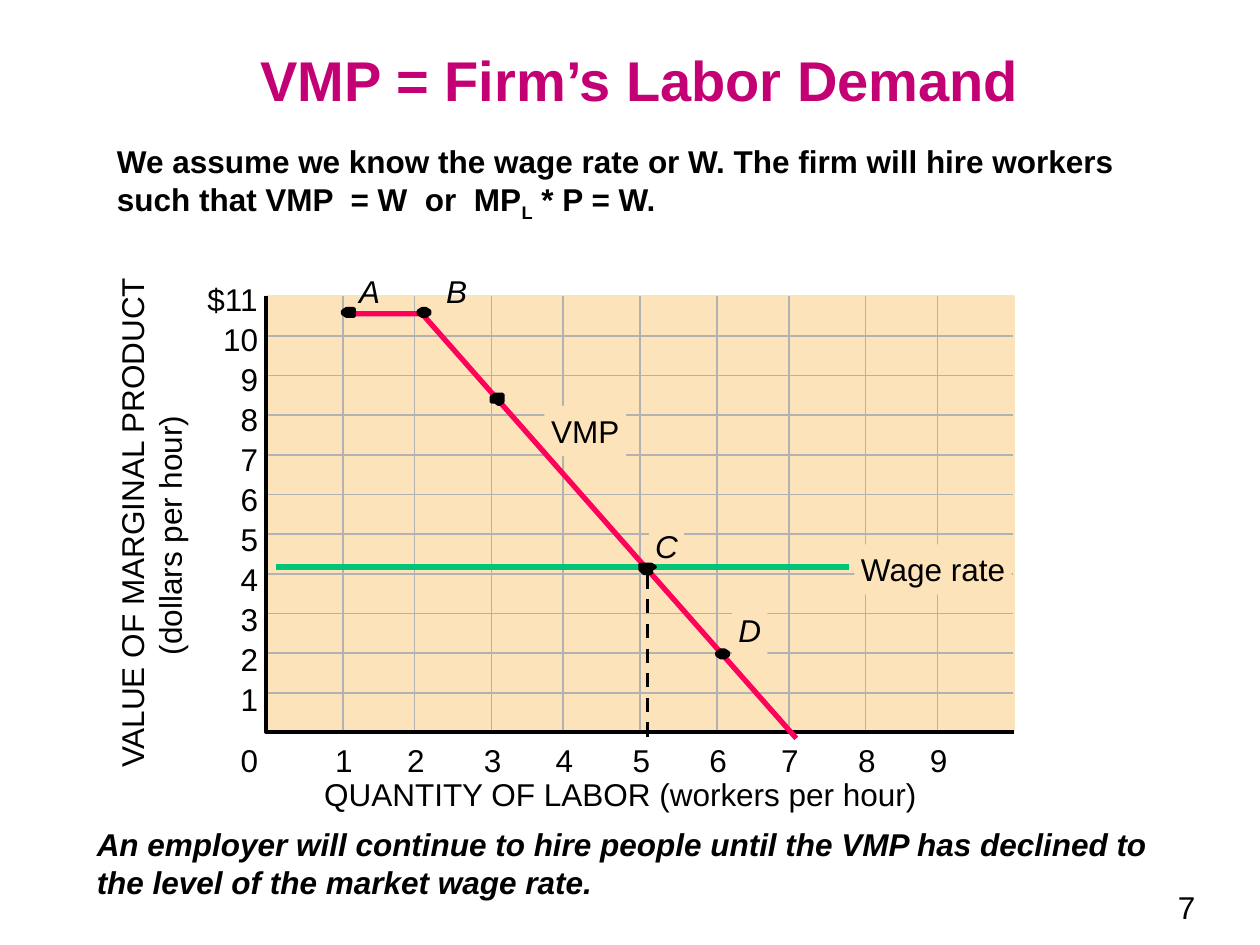
from dataclasses import dataclass
from typing import Optional

from lxml.etree import SubElement
from pptx import Presentation
from pptx.dml.color import RGBColor
from pptx.enum.dml import MSO_LINE
from pptx.enum.shapes import MSO_CONNECTOR
from pptx.enum.text import MSO_ANCHOR, MSO_AUTO_SIZE, PP_ALIGN
from pptx.oxml.ns import qn
from pptx.util import Cm, Pt

BLACK, GRID, PAPER, PAPER_EDGE = "000000", "B2B2B2", "FDE3BA", "F5E6BE"
TITLE_COLOR, DEMAND, WAGE = "C40075", "FF005A", "00C477"
LEFT, TOP, RIGHT, BOTTOM = 2.11, 2.35, 8.05, 5.81
GRID_X = (2.72, 3.29, 3.9, 4.47, 5.08, 5.69, 6.26, 6.87, 7.44)
GRID_STEP, LABEL_STEP = 0.315, 0.318
LABEL_WIDTHS = {1: 0.34, 2: 0.48, 3: 0.61}
TIGHT = (0.05, 0.05, 0.05, 0.05)

Point = tuple[float, float]


@dataclass
class Label:
    text: str
    left: float
    top: float
    width: float
    height: float = 0.37
    size: int = 18
    color: str = BLACK
    bold: bool = False
    italic: bool = False
    centered: bool = True
    wrap: bool = False
    fill: Optional[str] = None
    insets: tuple[float, float, float, float] = (0.1, 0.05, 0.1, 0.05)


@dataclass
class Segment:
    start: Point
    end: Point
    color: str = GRID
    width: float = 1
    dashed: bool = False


@dataclass
class Outline:
    points: list[Point]
    fill: Optional[str] = BLACK
    line: str = BLACK
    width: float = 2
    closed: bool = True


TITLE = Label("VMP = Firm’s Labor Demand", 0.83, 0.25, 8.5, 0.75, size=32,
              color=TITLE_COLOR, bold=True, wrap=True)
PAGE_NUMBER = Label("7", 9.25, 7, 0.67, 0.4, centered=False, wrap=True)
INTRO = Label("We assume we know the wage rate or W. The firm will hire workers "
              "such that VMP  = W  or  MP", 0.83, 1.08, 8.67, 0.71,
              bold=True, centered=False, wrap=True)
CONCLUSION = Label("An employer will continue to hire people until the VMP has declined "
                   "to the level of the market wage rate.", 0.67, 6.5, 8.83, 0.71,
                   bold=True, italic=True, centered=False, wrap=True)
VERTICAL_TITLE = Label("VALUE OF MARGINAL PRODUCT\n(dollars per hour)", -0.97, 3.9, 4.33, 0.7)
HORIZONTAL_TITLE = Label("QUANTITY OF LABOR (workers per hour)", 2.47, 6.1, 4.91)
LINE_NAMES = [
    Label("Wage rate", 6.78, 4.32, 1.25, 0.4, fill=PAPER, insets=TIGHT),
    Label("VMP", 4.32, 3.22, 0.65, 0.4, fill=PAPER, insets=TIGHT),
]
POINT_NAMES = [
    Label(name, left, 2.16, 0.32, 0.3, italic=True, insets=(0.1, 0, 0.05, 0))
    for name, left in (("A", 2.75), ("B", 3.44))
] + [
    Label(name, left, top, 0.28, 0.4, italic=True, fill=PAPER, insets=TIGHT)
    for name, left, top in (("C", 5.15, 4.13), ("D", 5.81, 4.8))
]
DOTS = [
    [(2.78, 2.51), (2.81, 2.51), (2.81, 2.45), (2.75, 2.45), (2.72, 2.47),
     (2.72, 2.49), (2.75, 2.51)],
    [(3.35, 2.51), (3.38, 2.51), (3.41, 2.49), (3.41, 2.47), (3.38, 2.45),
     (3.35, 2.45), (3.32, 2.47), (3.32, 2.49)],
    [(3.96, 3.21), (3.99, 3.19), (3.99, 3.13), (3.93, 3.13), (3.9, 3.15),
     (3.9, 3.19), (3.93, 3.19)],
    [(5.14, 4.55), (5.17, 4.55), (5.17, 4.52), (5.2, 4.5), (5.17, 4.48),
     (5.08, 4.48), (5.08, 4.52), (5.11, 4.55)],
    [(5.75, 5.22), (5.78, 5.2), (5.78, 5.18), (5.75, 5.16), (5.72, 5.16),
     (5.69, 5.18), (5.69, 5.2), (5.72, 5.22)],
]


def length(inches: float) -> Cm:
    return Cm(inches * 2.54)


def rgb(color: str) -> RGBColor:
    return RGBColor.from_string(color)


def style_span(span, label: Label) -> None:
    font = span.font
    font.name, font.size = "Arial", Pt(label.size)
    font.bold, font.italic = label.bold, label.italic
    font.color.rgb = rgb(label.color)


def draw_label(page, label: Label):
    box = page.shapes.add_textbox(*map(length, (label.left, label.top, label.width, label.height)))
    if label.fill:
        box.fill.solid()
        box.fill.fore_color.rgb = rgb(label.fill)
    frame = box.text_frame
    frame.margin_left, frame.margin_top, frame.margin_right, frame.margin_bottom = map(
        length, label.insets)
    frame.text = label.text
    frame.word_wrap = label.wrap
    frame.auto_size = MSO_AUTO_SIZE.SHAPE_TO_FIT_TEXT
    for para in frame.paragraphs:
        para.alignment = PP_ALIGN.CENTER if label.centered else PP_ALIGN.LEFT
        for span in para.runs:
            style_span(span, label)
    return box


def draw_segment(page, segment: Segment) -> None:
    connector = page.shapes.add_connector(
        MSO_CONNECTOR.STRAIGHT, *map(length, segment.start + segment.end))
    connector.line.color.rgb = rgb(segment.color)
    connector.line.width = Pt(segment.width)
    if segment.dashed:
        connector.line.dash_style = MSO_LINE.DASH
    SubElement(connector._element.spPr, qn("a:effectLst"))


def draw_outline(page, outline: Outline) -> None:
    start, *others = [(length(x), length(y)) for x, y in outline.points]
    builder = page.shapes.build_freeform(*start)
    builder.add_line_segments(others, close=outline.closed)
    shape = builder.convert_to_shape()
    shape.shadow.inherit = False
    if outline.fill:
        shape.fill.solid()
        shape.fill.fore_color.rgb = rgb(outline.fill)
    else:
        shape.fill.background()
    shape.line.color.rgb = rgb(outline.line)
    shape.line.width = Pt(outline.width)


def draw_plot(page) -> None:
    draw_outline(page, Outline([(RIGHT, BOTTOM), (RIGHT, TOP), (LEFT, TOP), (LEFT, BOTTOM)],
                               PAPER, PAPER_EDGE, 1))
    for x in GRID_X:
        draw_segment(page, Segment((x, 5.82), (x, TOP)))
    for row in range(1, 11):
        y = BOTTOM + 0.005 - row * GRID_STEP
        draw_segment(page, Segment((2.12, y), (8.04, y)))
    for number, center in enumerate((1.98, *(x + 0.01 for x in GRID_X))):
        draw_label(page, Label(str(number), center - 0.17, 5.83, 0.34))
    for row, text in enumerate((*map(str, range(1, 11)), "$11")):
        width = LABEL_WIDTHS[len(text)]
        draw_label(page, Label(text, 2.15 - width, 5.35 - row * LABEL_STEP, width))
    draw_outline(page, Outline([(LEFT, TOP), (LEFT, BOTTOM), (RIGHT, BOTTOM)],
                               None, closed=False))
    vertical = draw_label(page, VERTICAL_TITLE)
    vertical.rotation = 270
    properties = vertical.text_frame.paragraphs[0]._p.get_or_add_pPr()
    properties.set("marL", str(length(0.2)))
    properties.set("indent", "0")
    draw_label(page, HORIZONTAL_TITLE)


def draw_curves(page) -> None:
    for label in LINE_NAMES:
        draw_label(page, label)
    draw_outline(page, Outline([(2.78, 2.49), (3.35, 2.49), (6.32, 5.86)],
                               None, DEMAND, 3, closed=False))
    for label in POINT_NAMES:
        draw_label(page, label)
    draw_segment(page, Segment((2.19, 4.5), (6.74, 4.5), WAGE, 3))
    draw_segment(page, Segment((5.14, 4.56), (5.14, 5.89), BLACK, 2, dashed=True))
    for points in DOTS:
        draw_outline(page, Outline(points))


def draw_intro(page) -> None:
    para = draw_label(page, INTRO).text_frame.paragraphs[0]
    for text, baseline in (("L", "-25000"), (" * P = W.", "0")):
        span = para.add_run()
        span.text = text
        style_span(span, INTRO)
        span._r.get_or_add_rPr().set("baseline", baseline)


def main() -> None:
    """Build the labor demand slide and save it."""
    deck = Presentation()
    deck.slide_width, deck.slide_height = length(10), length(7.5)
    page = deck.slides.add_slide(deck.slide_layouts[6])
    draw_label(page, PAGE_NUMBER)
    title = draw_label(page, TITLE).text_frame
    title.auto_size = MSO_AUTO_SIZE.NONE
    title.vertical_anchor = MSO_ANCHOR.MIDDLE
    draw_plot(page)
    draw_curves(page)
    draw_intro(page)
    draw_label(page, CONCLUSION)
    deck.save("out.pptx")


if __name__ == "__main__":
    main()
